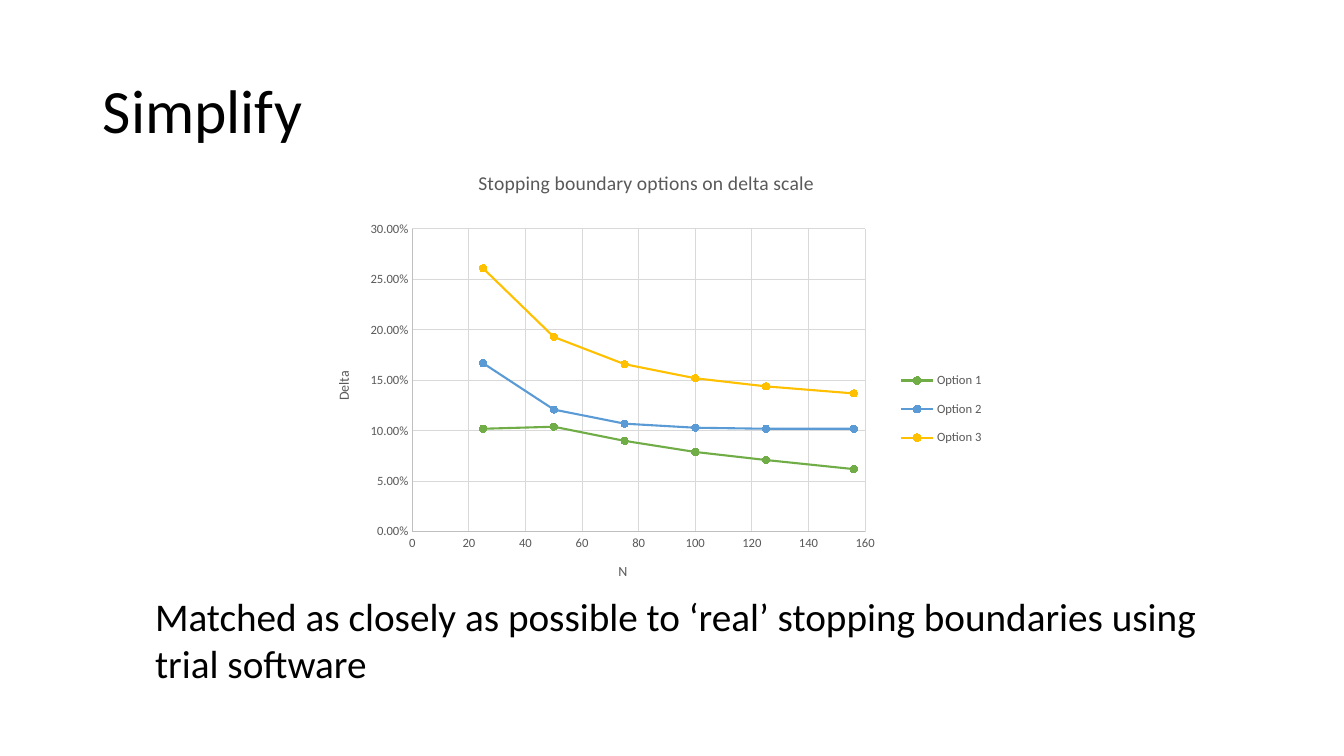
from lxml import etree
from pptx import Presentation
from pptx.chart.data import XyChartData
from pptx.dml.color import RGBColor
from pptx.enum.chart import XL_CHART_TYPE, XL_LEGEND_POSITION, XL_MARKER_STYLE, XL_TICK_MARK
from pptx.enum.text import MSO_ANCHOR, PP_ALIGN
from pptx.oxml.ns import qn
from pptx.util import Inches, Pt

SCATTER_LINES = XL_CHART_TYPE.XY_SCATTER_LINES
LEGEND_RIGHT = XL_LEGEND_POSITION.RIGHT
CIRCLE = XL_MARKER_STYLE.CIRCLE
NO_TICK = XL_TICK_MARK.NONE
MIDDLE, LEFT = MSO_ANCHOR.MIDDLE, PP_ALIGN.LEFT

FONT = "Calibri"
BLACK, GRAY, AXIS_GRAY, GRID_GRAY = "000000", "595959", "BFBFBF", "D9D9D9"

SAMPLE_SIZES = (25, 50, 75, 100, 125, 156)
OPTIONS = (
    ("Option 1", "70AD47", (0.102, 0.104, 0.09, 0.079, 0.071, 0.062)),
    ("Option 2", "5B9BD5", (0.167, 0.121, 0.107, 0.103, 0.102, 0.102)),
    ("Option 3", "FFC000", (0.261, 0.193, 0.166, 0.152, 0.144, 0.137)),
)

TITLE_BOX = (0.92, 0.4, 11.5, 1.45)
CHART_BOX = (2.84, 1.5, 7.14, 4.49)
NOTE_BOX = (1.44, 5.83, 10.86, 1.04)
PLOT_SHARES = (0.175, 0.172, 0.629, 0.669)
LEGEND_SHARES = (0.84, 0.46, 0.14, 0.22)


def color(hex_code):
    return RGBColor.from_string(hex_code)


def format_font(font, size, hex_code):
    font.name, font.size, font.bold = FONT, Pt(size), False
    font.color.rgb = color(hex_code)


def format_line(line, hex_code, width):
    line.color.rgb = color(hex_code)
    line.width = Pt(width)


def write_text(frame, text, size, hex_code=BLACK, align=None, spacing=None):
    frame.text = text
    paragraph = frame.paragraphs[0]
    paragraph.alignment, paragraph.line_spacing = align, spacing
    format_font(paragraph.runs[0].font, size, hex_code)


def build_layout(shares, inner=False):
    """Return a c:layout element holding x, y, width and height as chart shares."""
    layout = etree.Element(qn("c:layout"))
    manual = etree.SubElement(layout, qn("c:manualLayout"))
    settings = [("layoutTarget", "inner")] if inner else []
    settings += [("xMode", "edge"), ("yMode", "edge")]
    settings += zip("xywh", shares)
    for name, value in settings:
        etree.SubElement(manual, qn(f"c:{name}")).set("val", str(value))
    return layout


def place_chart_parts(chart):
    """Fix the plot area and the legend at their shares of the chart."""
    chart_space = chart.element if hasattr(chart, "element") else chart._chartSpace
    plot_area = chart_space.find(".//" + qn("c:plotArea"))
    legend = chart_space.find(".//" + qn("c:legend"))
    for parent, position, layout in (
        (plot_area, 0, build_layout(PLOT_SHARES, inner=True)),
        (legend, 1, build_layout(LEGEND_SHARES)),
    ):
        for old_layout in parent.findall(qn("c:layout")):
            parent.remove(old_layout)
        parent.insert(position, layout)


def format_axis(axis, title, maximum, step, number_format):
    axis.minimum_scale, axis.maximum_scale, axis.major_unit = 0, maximum, step
    axis.major_tick_mark = axis.minor_tick_mark = NO_TICK
    axis.has_major_gridlines = True
    format_line(axis.major_gridlines.format.line, GRID_GRAY, 0.75)
    format_line(axis.format.line, AXIS_GRAY, 0.75)
    format_font(axis.tick_labels.font, 9, GRAY)
    axis.tick_labels.number_format = number_format
    axis.tick_labels.number_format_is_linked = False
    write_text(axis.axis_title.text_frame, title, 10, GRAY)


def format_series(series, hex_code):
    series.smooth = False
    format_line(series.format.line, hex_code, 1.5)
    marker = series.marker
    marker.style, marker.size = CIRCLE, 5
    marker.format.fill.solid()
    marker.format.fill.fore_color.rgb = color(hex_code)
    format_line(marker.format.line, hex_code, 0.75)


def add_boundary_chart(slide, box):
    data = XyChartData(number_format="0.00%")
    for name, _, deltas in OPTIONS:
        series_data = data.add_series(name)
        for sample_size, delta in zip(SAMPLE_SIZES, deltas):
            series_data.add_data_point(sample_size, delta)
    chart = slide.shapes.add_chart(SCATTER_LINES, *map(Inches, box), data).chart
    format_font(chart.font, 10, BLACK)
    write_text(chart.chart_title.text_frame, "Stopping boundary options on delta scale", 14, GRAY)
    chart.chart_title.include_in_layout = False
    chart.plots[0].vary_by_categories = False
    for series, (_, hex_code, _) in zip(chart.plots[0].series, OPTIONS):
        format_series(series, hex_code)
    format_axis(chart.category_axis, "N", 160, 20, "General")
    format_axis(chart.value_axis, "Delta", 0.3, 0.05, "0.00%")
    chart.has_legend = True
    chart.legend.position = LEGEND_RIGHT
    chart.legend.include_in_layout = False
    format_font(chart.legend.font, 9, GRAY)
    place_chart_parts(chart)


def place_title(slide, box):
    title = slide.shapes.title
    title.left, title.top, title.width, title.height = map(Inches, box)
    title.text_frame.vertical_anchor = MIDDLE
    write_text(title.text_frame, "Simplify", 44, align=LEFT, spacing=0.9)


def add_note(slide, box):
    frame = slide.shapes.add_textbox(*map(Inches, box)).text_frame
    frame.word_wrap = True
    write_text(
        frame,
        "Matched as closely as possible to ‘real’ stopping boundaries using trial software",
        28,
    )


def main():
    presentation = Presentation()
    presentation.slide_width, presentation.slide_height = Inches(13.33), Inches(7.5)
    slide = presentation.slides.add_slide(presentation.slide_layouts[5])
    place_title(slide, TITLE_BOX)
    add_boundary_chart(slide, CHART_BOX)
    add_note(slide, NOTE_BOX)
    presentation.save("out.pptx")


if __name__ == "__main__":
    main()
